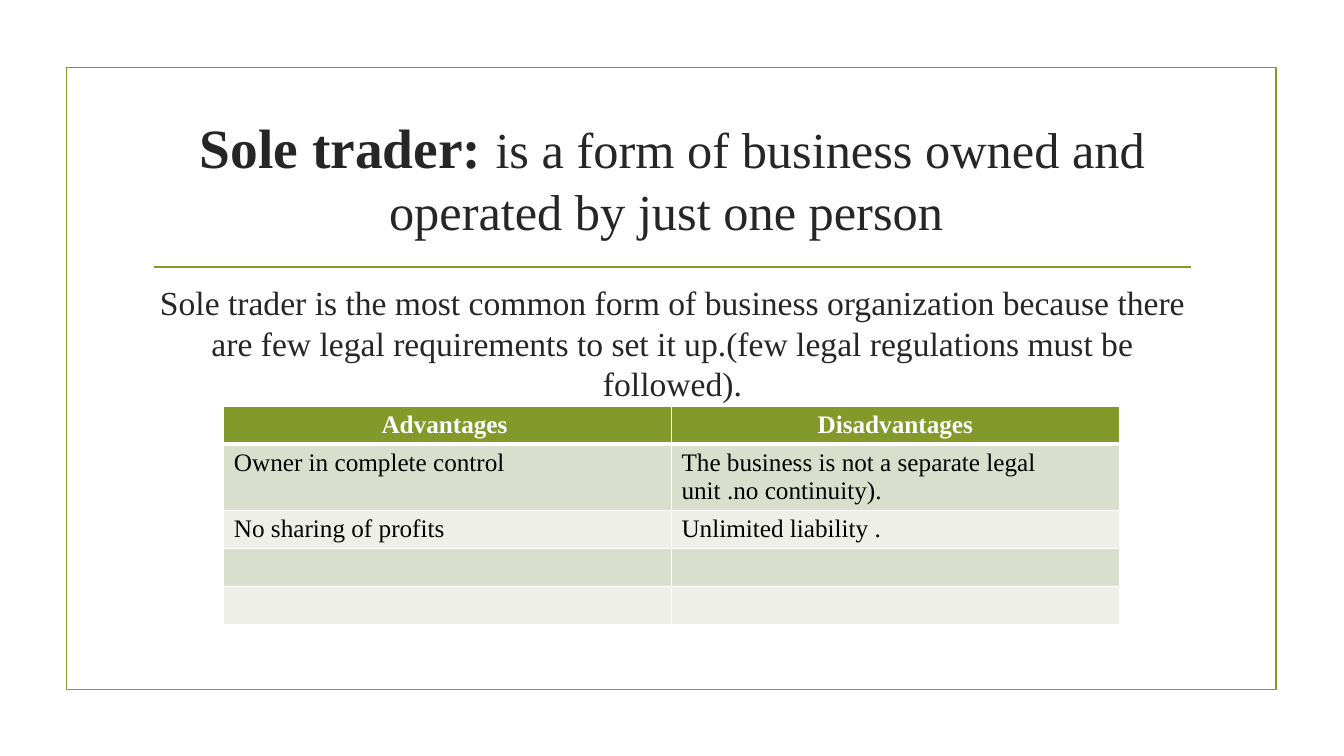
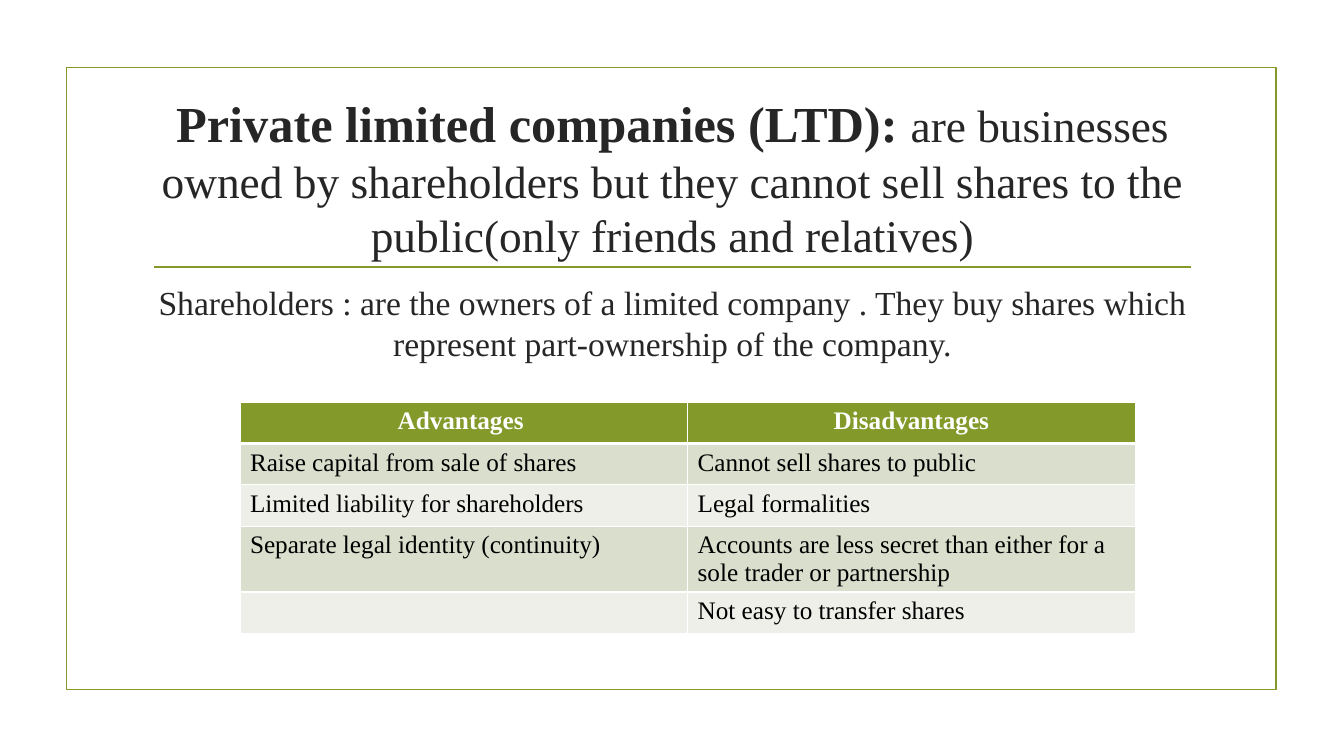
from lxml import etree
from pptx import Presentation
from pptx import util as u
from pptx.dml.color import RGBColor
from pptx.enum import shapes, text
from pptx.oxml.ns import qn

OLIVE = RGBColor(0x83, 0x99, 0x2A)
INK = RGBColor(0x26, 0x26, 0x26)
BLACK = RGBColor(0, 0, 0)
WHITE = RGBColor(0xFF, 0xFF, 0xFF)
BANDS = (RGBColor(0xD9, 0xDE, 0xCD), RGBColor(0xED, 0xEF, 0xE8))
FONT = "Times New Roman"

SLIDE_W, SLIDE_H = 13.33, 7.5
CONTENT_X, CONTENT_W = 1.42, 10.5
TITLE_Y, TITLE_H = 1.04, 1.43
RULE_X, RULE_Y, RULE_W = 1.53, 2.65, 10.28
BODY_Y, BODY_H = 2.75, 3.63
COLUMN_W = 4.44
HEADINGS = ("Advantages ", "Disadvantages")
CENTER, LEFT = text.PP_ALIGN.CENTER, text.PP_ALIGN.LEFT


def inches(*lengths):
    return [u.Inches(length) for length in lengths]


def write(paragraph, *runs, color=INK, align=CENTER):
    """Fill a paragraph with (words, size, bold) runs."""
    paragraph.alignment = align
    paragraph.line_spacing = 1.0
    paragraph.space_before = u.Pt(0)
    for words, size, bold in runs:
        if not words:
            paragraph.font.size, paragraph.font.name = u.Pt(size), FONT
            continue
        run = paragraph.add_run()
        run.text = words
        run.font.name, run.font.size, run.font.bold = FONT, u.Pt(size), bold
        run.font.color.rgb = color


def add_frame(slide):
    """Olive border and the rule under the title."""
    border = slide.shapes.add_shape(
        shapes.MSO_SHAPE.RECTANGLE, *inches(0.66, 0.67, 12, 6.17))
    border.shadow.inherit = False
    border.fill.background()
    rule = slide.shapes.add_connector(
        shapes.MSO_CONNECTOR.STRAIGHT,
        *inches(RULE_X, RULE_Y, RULE_X + RULE_W, RULE_Y))
    for part in (border, rule):
        part.line.color.rgb = OLIVE
        part.line.width = u.Pt(1.25)
    etree.SubElement(rule._element.spPr, qn("a:effectLst"))


def fill_placeholder(holder, top, height, anchor, *runs):
    holder.left, holder.top, holder.width, holder.height = inches(
        CONTENT_X, top, CONTENT_W, height)
    frame = holder.text_frame
    frame.word_wrap = True
    frame.auto_size = text.MSO_AUTO_SIZE.NONE
    frame.vertical_anchor = anchor
    paragraph = frame.paragraphs[0]
    properties = paragraph._p.get_or_add_pPr()
    properties.set("marL", "0")
    properties.set("indent", "0")
    etree.SubElement(properties, qn("a:buNone"))
    write(paragraph, *runs)


def set_borders(cell, **widths):
    properties = cell._tc.get_or_add_tcPr()
    for side in "LRTB":
        line = etree.SubElement(properties, qn(f"a:ln{side}"),
                                w=str(u.Pt(widths.get(side, 1))))
        fill = etree.SubElement(line, qn("a:solidFill"))
        etree.SubElement(fill, qn("a:srgbClr"), val=str(WHITE))


def add_comparison(slide, left, top, row_heights, rows):
    """Two-column table with a header and alternating bands."""
    table = slide.shapes.add_table(
        len(rows) + 1, len(HEADINGS),
        *inches(left, top, COLUMN_W * len(HEADINGS), sum(row_heights))).table
    for column in table.columns:
        column.width = u.Inches(COLUMN_W)
    for r, (height, entries) in enumerate(zip(row_heights, [HEADINGS, *rows])):
        table.rows[r].height = u.Inches(height)
        header = r == 0
        for c, words in enumerate(entries):
            cell = table.cell(r, c)
            if header:
                set_borders(cell, B=3)
            elif r == 1:
                set_borders(cell, T=3)
            else:
                set_borders(cell)
            cell.fill.solid()
            cell.fill.fore_color.rgb = OLIVE if header else BANDS[(r - 1) % 2]
            write(cell.text_frame.paragraphs[0], (words, 18, header),
                  color=WHITE if header else BLACK,
                  align=CENTER if header else LEFT)


def add_business_slide(deck, term, meaning, term_size, meaning_size, remark):
    slide = deck.slides.add_slide(deck.slide_layouts[1])
    add_frame(slide)
    fill_placeholder(slide.shapes.title, TITLE_Y, TITLE_H,
                     text.MSO_ANCHOR.MIDDLE,
                     (term, term_size, True), (meaning, meaning_size, False))
    fill_placeholder(slide.placeholders[1], BODY_Y, BODY_H,
                     text.MSO_ANCHOR.TOP, (remark, 24, False))
    return slide


def main():
    deck = Presentation()
    deck.slide_width, deck.slide_height = inches(SLIDE_W, SLIDE_H)

    # Sole trader
    sole_trader = add_business_slide(
        deck, "Sole trader: ",
        "is a form of business owned and operated by just one person ",
        39.6, 36,
        "Sole trader is the most common form of business organization because "
        "there are few legal requirements to set it up.(few legal regulations "
        "must be followed).")
    add_comparison(sole_trader, 2.22, 4.03, [0.27, 0.47, 0.27, 0.27, 0.27], [
        ("Owner in complete control",
         "The business is not a separate legal unit .no continuity)."),
        ("No sharing of profits", "Unlimited liability ."),
        ("", ""),
        ("", ""),
    ])

    # Private limited companies
    private_limited = add_business_slide(
        deck, "Private limited companies (LTD): ",
        "are businesses owned by shareholders but they cannot sell shares to "
        "the public(only friends and relatives)",
        36, 32.4,
        "Shareholders : are the owners of a limited company . They buy shares "
        "which represent part-ownership of the company.")
    add_comparison(private_limited, 2.38, 3.99, [0.41] * 5, [
        ("Raise capital from sale of shares", "Cannot sell shares to public"),
        ("Limited liability for shareholders", "Legal formalities"),
        ("Separate legal identity (continuity)",
         "Accounts are less secret than either for a sole trader or "
         "partnership"),
        ("", "Not easy to transfer shares"),
    ])

    deck.save("out.pptx")


if __name__ == "__main__":
    main()
